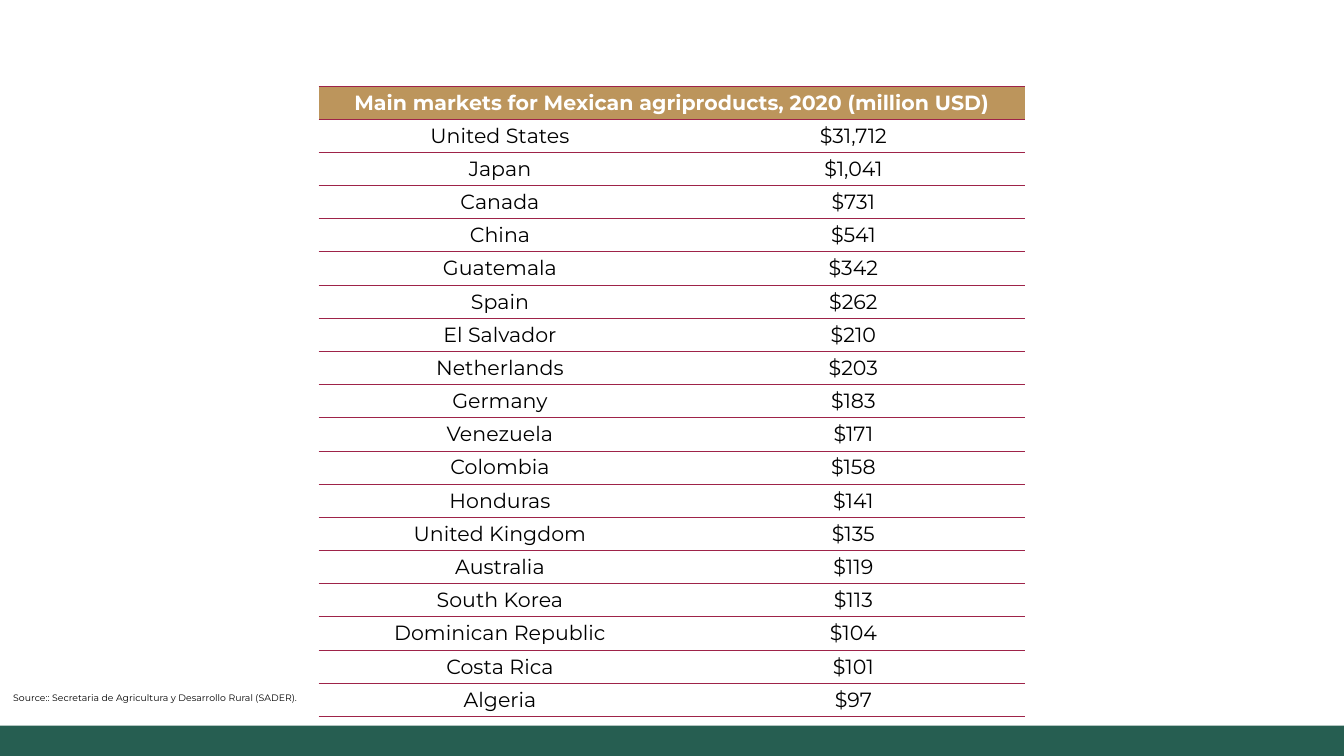
from lxml import etree
from pptx import Presentation
from pptx import util as u
from pptx.dml.color import RGBColor
from pptx.enum import shapes, text
from pptx.oxml.ns import qn

COLOURS = {"green": "265E51", "gold": "BC955C", "wine": "9E2349",
           "white": "FFFFFF", "black": "000000"}
FONT = "Montserrat"
HEADING = "Main markets for Mexican agriproducts, 2020 (million USD)"
MARKETS = [
    ("United States", 31712), ("Japan", 1041), ("Canada", 731),
    ("China", 541), ("Guatemala", 342), ("Spain", 262),
    ("El Salvador", 210), ("Netherlands", 203), ("Germany", 183),
    ("Venezuela", 171), ("Colombia", 158), ("Honduras", 141),
    ("United Kingdom", 135), ("Australia", 119), ("South Korea", 113),
    ("Dominican Republic", 104), ("Costa Rica", 101), ("Algeria", 97),
]
CELL_FORMAT = {
    "margin_left": u.Inches(0.06), "margin_right": u.Inches(0.06),
    "margin_top": u.Inches(0.03), "margin_bottom": u.Inches(0.03),
    "vertical_anchor": text.MSO_ANCHOR.MIDDLE,
}


def write(para, words, size, colour, bold=False):
    span = para.add_run()
    span.text = words
    style = {"name": FONT, "size": u.Pt(size), "bold": bold}
    for name, value in style.items():
        setattr(span.font, name, value)
    span.font.color.rgb = RGBColor.from_string(COLOURS[colour])


def rule_cell(cell):
    """Draw thin lines above and below the cell and none at its sides."""
    properties = cell._tc.get_or_add_tcPr()
    for side in ("lnL", "lnR"):
        line = etree.SubElement(properties, qn(f"a:{side}"))
        etree.SubElement(line, qn("a:noFill"))
    for side in ("lnT", "lnB"):
        line = etree.SubElement(properties, qn(f"a:{side}"), w=str(u.Pt(0.5)))
        fill = etree.SubElement(line, qn("a:solidFill"))
        etree.SubElement(fill, qn("a:srgbClr"), val=COLOURS["wine"])


deck = Presentation()
deck.slide_width = u.Inches(10)
deck.slide_height = deck.slide_width * 9 // 16
page = deck.slides.add_slide(deck.slide_layouts[6])

# Footer band
band_top = int(deck.slide_height * 0.96)
band = page.shapes.add_shape(shapes.MSO_SHAPE.RECTANGLE, 0, band_top,
                             deck.slide_width, deck.slide_height - band_top)
band.shadow.inherit = False
band.fill.solid()
band.fill.fore_color.rgb = RGBColor.from_string(COLOURS["green"])
band.line.fill.background()

# Market table
column_widths = [u.Inches(2.7), u.Inches(2.56)]
row_count = len(MARKETS) + 1
table = page.shapes.add_table(row_count, 2, u.Inches(2.37), u.Inches(0.64),
                              sum(column_widths), u.Inches(4.64)).table
table.first_row = False
table.horz_banding = False
for column, width in zip(table.columns, column_widths):
    column.width = width

rows = [(HEADING, "")] + [(name, f"${value:,}") for name, value in MARKETS]
for row_index, row in enumerate(rows):
    is_heading = row_index == 0
    for column_index, words in enumerate(row):
        cell = table.cell(row_index, column_index)
        for name, value in CELL_FORMAT.items():
            setattr(cell, name, value)
        rule_cell(cell)
        if is_heading:
            cell.fill.solid()
            cell.fill.fore_color.rgb = RGBColor.from_string(COLOURS["gold"])
        else:
            cell.fill.background()
        if words:
            para = cell.text_frame.paragraphs[0]
            para.alignment = text.PP_ALIGN.CENTER
            write(para, words, 11, "white" if is_heading else "black", is_heading)
table.cell(0, 0).merge(table.cell(0, 1))

# Source line
box = page.shapes.add_textbox(0, u.Inches(5.1), u.Inches(5.71), u.Inches(0.19))
box.text_frame.word_wrap = True
box.text_frame.auto_size = text.MSO_AUTO_SIZE.SHAPE_TO_FIT_TEXT
write(box.text_frame.paragraphs[0],
      "Source:: Secretaria de Agricultura y Desarrollo Rural (SADER).", 5, "black")

deck.save("out.pptx")
